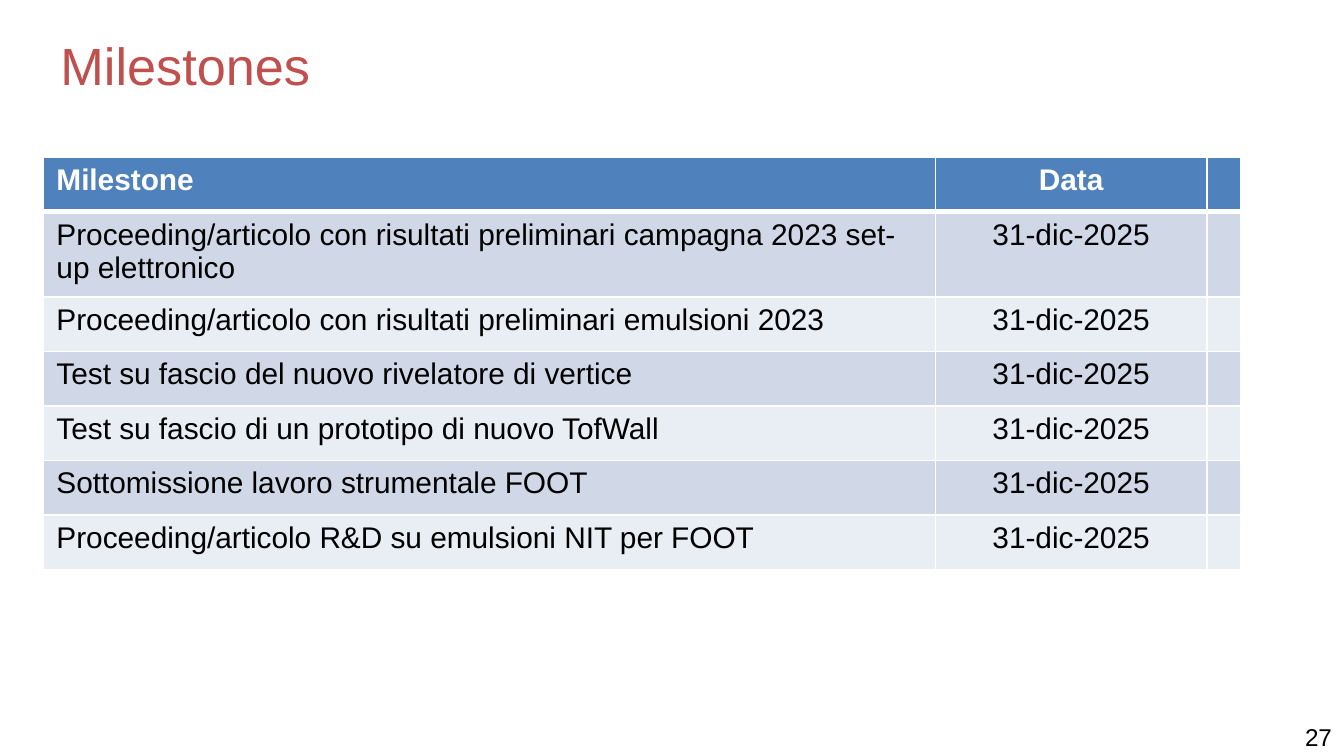
from lxml import etree
from pptx import Presentation
from pptx import util as u
from pptx.dml.color import RGBColor
from pptx.enum import text
from pptx.oxml.ns import qn


def style(paragraph, size, color, bold=False, align=text.PP_ALIGN.LEFT):
    paragraph.alignment = align
    paragraph.font.name = "Arial"
    paragraph.font.size = u.Pt(size)
    paragraph.font.bold = bold
    paragraph.font.color.rgb = RGBColor.from_string(color)


def add_border(cell, side, points, color="FFFFFF"):
    line = etree.SubElement(cell._tc.get_or_add_tcPr(), qn(f"a:ln{side}"), w=str(u.Pt(points)))
    fill = etree.SubElement(line, qn("a:solidFill"))
    etree.SubElement(fill, qn("a:srgbClr"), val=color)


deck = Presentation()
deck.slide_width = u.Inches(10)
deck.slide_height = u.Inches(10 * 9 / 16)
slide = deck.slides.add_slide(deck.slide_layouts[6])

heading = slide.shapes.add_textbox(u.Inches(0.45), u.Inches(0.18), u.Inches(9.55), u.Inches(0.66)).text_frame
heading.word_wrap = True
heading.vertical_anchor = text.MSO_ANCHOR.MIDDLE
heading.margin_left = heading.margin_right = heading.margin_top = heading.margin_bottom = 0
heading.text = "Milestones"
heading.paragraphs[0].line_spacing = 0.9
style(heading.paragraphs[0], 28, "C0504D")

page_number = slide.shapes.add_textbox(u.Inches(7.75), u.Inches(5.33), u.Inches(2.25), u.Inches(0.3)).text_frame
page_number.word_wrap = True
page_number.vertical_anchor = text.MSO_ANCHOR.MIDDLE
page_number.margin_left = page_number.margin_right = u.Inches(0.09)
page_number.text = "27"
style(page_number.paragraphs[0], 13, "000000", align=text.PP_ALIGN.RIGHT)

due_date = "31-dic-2025"
goals = [
    "Proceeding/articolo con risultati preliminari campagna 2023 set-up elettronico",
    "Proceeding/articolo con risultati preliminari emulsioni 2023",
    "Test su fascio del nuovo rivelatore di vertice",
    "Test su fascio di un prototipo di nuovo TofWall",
    "Sottomissione lavoro strumentale FOOT",
    "Proceeding/articolo R&D su emulsioni NIT per FOOT",
]
entries = [("Milestone", "Data", "")] + [(goal, due_date, "") for goal in goals]
widths = [6.64, 2.02, 0.25]
table_height = 2.84

milestones = slide.shapes.add_table(
    len(entries), len(widths), u.Inches(0.32), u.Inches(1.17),
    u.Inches(sum(widths)), u.Inches(table_height)).table
for column, width in zip(milestones.columns, widths):
    column.width = u.Inches(width)

for r, entry in enumerate(entries):
    is_header = r == 0
    background = "4F81BD" if is_header else ("E9EDF4", "D0D8E8")[r % 2]
    for c, content in enumerate(entry):
        cell = milestones.cell(r, c)
        cell.text = content
        style(cell.text_frame.paragraphs[0], 16, "FFFFFF" if is_header else "000000", is_header,
              text.PP_ALIGN.CENTER if c == 1 else text.PP_ALIGN.LEFT)
        for side in "LRB" if r == 1 else "LRTB":
            add_border(cell, side, 3 if is_header and side == "B" else 1)
        cell.fill.solid()
        cell.fill.fore_color.rgb = RGBColor.from_string(background)

deck.save("out.pptx")
